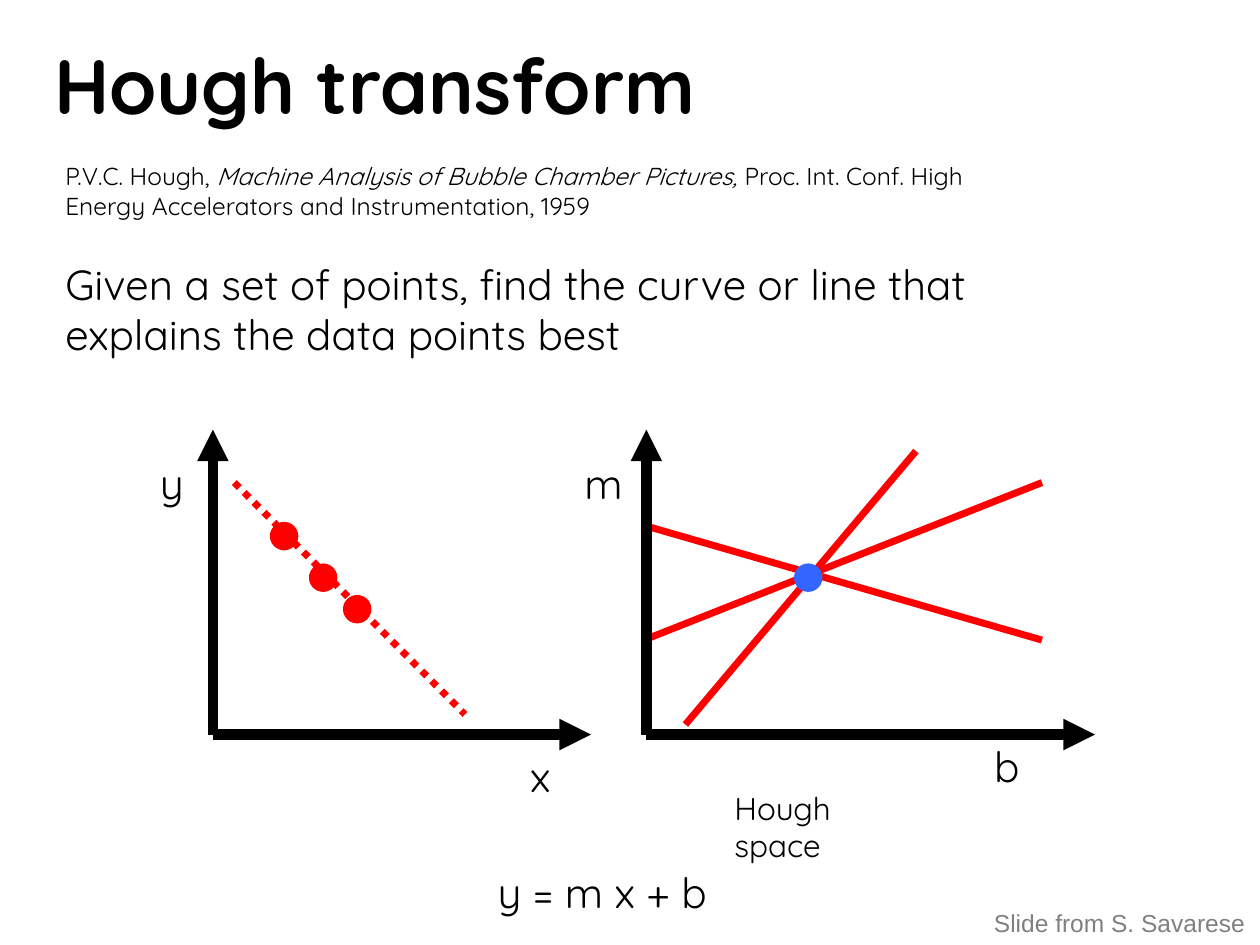
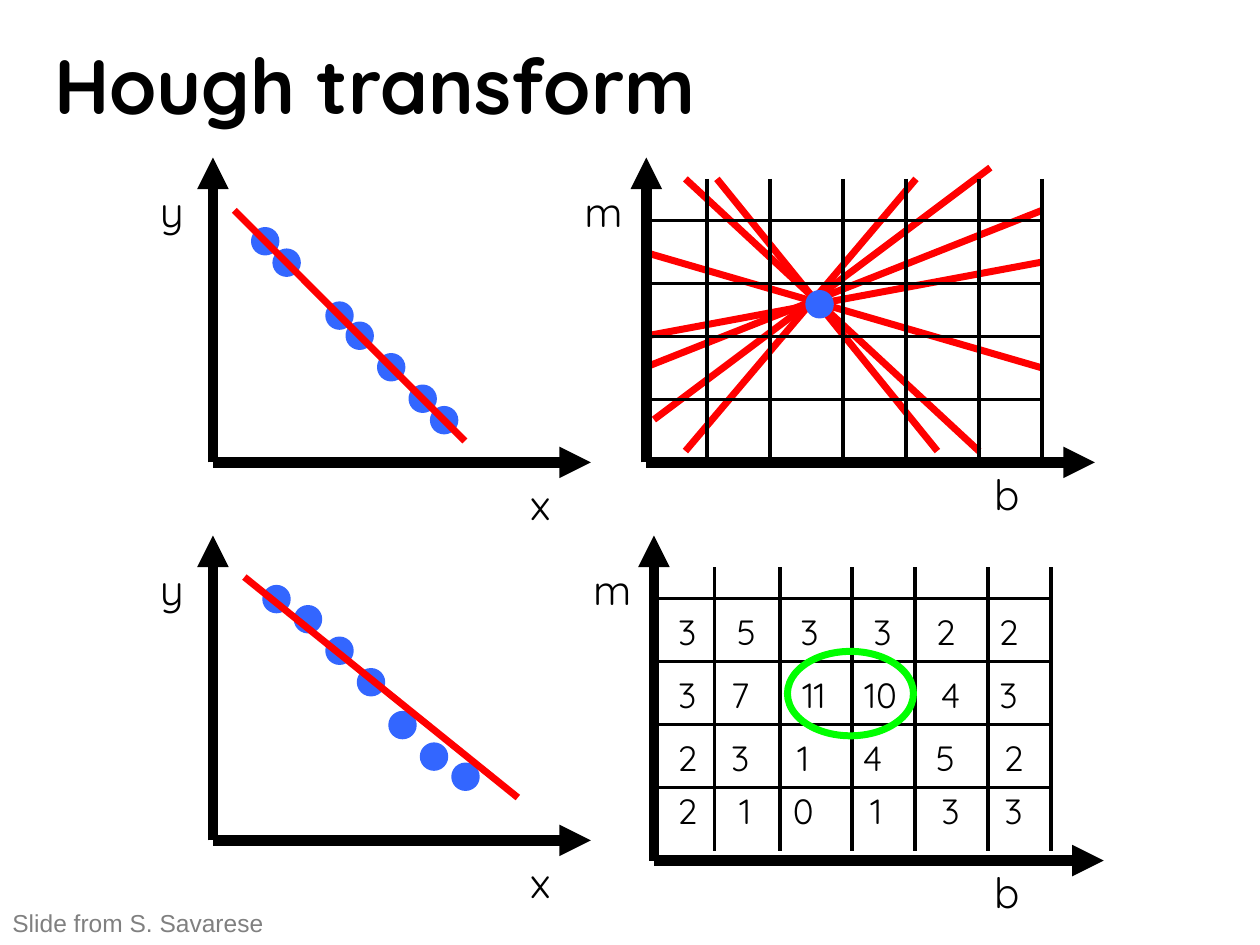
from dataclasses import dataclass
from typing import NamedTuple

from pptx import Presentation
from pptx.dml.color import RGBColor
from pptx.enum.dml import MSO_LINE
from pptx.enum.shapes import MSO_CONNECTOR, MSO_SHAPE
from pptx.enum.text import MSO_ANCHOR, MSO_AUTO_SIZE, PP_ALIGN
from pptx.oxml.ns import qn
from pptx.shapes.autoshape import Shape
from pptx.slide import Slide
from pptx.util import Emu, Pt
from lxml import etree

STRAIGHT = MSO_CONNECTOR.STRAIGHT
OVAL = MSO_SHAPE.OVAL
DOTTED = MSO_LINE.ROUND_DOT
TOP, MIDDLE = MSO_ANCHOR.TOP, MSO_ANCHOR.MIDDLE
LEFT, CENTER = PP_ALIGN.LEFT, PP_ALIGN.CENTER
GROW = MSO_AUTO_SIZE.SHAPE_TO_FIT_TEXT

EMU_PER_PX = 9144
TITLE_ONLY = 5
DOT_SIZE = 17


@dataclass(frozen=True)
class Theme:
    font: str = "Quicksand"
    credit_font: str = "Arial"
    ink: str = "000000"
    red: str = "FF0000"
    blue: str = "3366FF"
    green: str = "00FF00"
    gray: str = "808080"
    title_size: int = 44
    body_size: int = 24
    count_size: int = 20
    caption_size: int = 18
    small_size: int = 14
    axis_width: int = 6
    mark_width: int = 4
    grid_width: int = 2


THEME = Theme()


class Box(NamedTuple):
    left: int
    top: int
    width: int
    height: int


class Segment(NamedTuple):
    x1: int
    y1: int
    x2: int
    y2: int


class Point(NamedTuple):
    left: int
    top: int


class TextRun(NamedTuple):
    text: str
    italic: bool = False


class TextStyle(NamedTuple):
    size: int
    color: str = THEME.ink
    font: str = THEME.font
    bold: bool = False
    align: PP_ALIGN = LEFT
    anchor: MSO_ANCHOR = TOP
    wrap: bool = False


class AxisLabel(NamedTuple):
    text: str
    offset: Point
    width: int


class Axes(NamedTuple):
    origin: Point
    width: int
    height: int
    across: AxisLabel
    upward: AxisLabel


class Grid(NamedTuple):
    columns: tuple[int, ...]
    rows: tuple[int, ...]
    left: int
    right: int
    top: int
    bottom: int


class CountRow(NamedTuple):
    top: int
    counts: tuple[int, ...]
    lefts: tuple[int, ...]


TITLE = TextStyle(THEME.title_size, bold=True, wrap=True)
BODY = TextStyle(THEME.body_size, wrap=True)
CITATION = TextStyle(THEME.small_size, anchor=MIDDLE, wrap=True)
CAPTION = TextStyle(THEME.caption_size, wrap=True)
CREDIT = TextStyle(THEME.small_size, THEME.gray, THEME.credit_font)
LABEL = TextStyle(THEME.body_size, align=CENTER)
COUNT = TextStyle(THEME.count_size, align=CENTER)

X_LABEL = AxisLabel("x", Point(242, 8), 35)
Y_LABEL = AxisLabel("y", Point(-52, 17), 36)
B_LABEL = AxisLabel("b", Point(266, 0), 40)
M_LABEL = AxisLabel("m", Point(-59, 17), 49)


def px(length: int) -> Emu:
    return Emu(length * EMU_PER_PX)


def place(shape: Shape, box: Box) -> None:
    shape.left, shape.top, shape.width, shape.height = map(px, box)


def write(shape: Shape, runs: list[TextRun], style: TextStyle) -> None:
    frame = shape.text_frame
    frame.word_wrap = style.wrap
    frame.auto_size = GROW
    frame.vertical_anchor = style.anchor
    paragraph = frame.paragraphs[0]
    paragraph.alignment = style.align
    for text, italic in runs:
        run = paragraph.add_run()
        run.text = text
        run.font.name = style.font
        run.font.size = Pt(style.size)
        run.font.bold = style.bold
        run.font.italic = italic
        run.font.color.rgb = RGBColor.from_string(style.color)


def add_text(slide: Slide, box: Box, style: TextStyle, *runs: TextRun) -> None:
    write(slide.shapes.add_textbox(*map(px, box)), list(runs), style)


def add_line(slide: Slide, segment: Segment, color: str, width: int,
             arrow: bool = False, dotted: bool = False) -> None:
    connector = slide.shapes.add_connector(STRAIGHT, *map(px, segment))
    connector.line.color.rgb = RGBColor.from_string(color)
    connector.line.width = Pt(width)
    if dotted:
        connector.line.dash_style = DOTTED
    properties = connector._element.spPr
    if arrow:
        outline = properties.find(qn("a:ln"))
        etree.SubElement(outline, qn("a:tailEnd"), type="triangle")
    etree.SubElement(properties, qn("a:effectLst"))


def add_red_lines(slide: Slide, *segments: Segment, dotted: bool = False) -> None:
    for segment in segments:
        add_line(slide, segment, THEME.red, THEME.mark_width, dotted=dotted)


def add_oval(slide: Slide, box: Box, color: str, filled: bool = True) -> None:
    oval = slide.shapes.add_shape(OVAL, *map(px, box))
    oval.shadow.inherit = False
    if filled:
        oval.fill.solid()
        oval.fill.fore_color.rgb = RGBColor.from_string(color)
    else:
        oval.fill.background()
    oval.line.color.rgb = RGBColor.from_string(color)
    oval.line.width = Pt(THEME.mark_width)


def add_dots(slide: Slide, color: str, *points: Point) -> None:
    for point in points:
        add_oval(slide, Box(*point, DOT_SIZE, DOT_SIZE), color)


def add_axes(slide: Slide, axes: Axes) -> None:
    left, bottom = axes.origin
    top = bottom - axes.height
    for segment in (Segment(left, bottom, left, top),
                    Segment(left, bottom, left + axes.width, bottom)):
        add_line(slide, segment, THEME.ink, THEME.axis_width, arrow=True)
    for label, base in ((axes.across, bottom), (axes.upward, top)):
        box = Box(left + label.offset.left, base + label.offset.top, label.width, 50)
        add_text(slide, box, LABEL, TextRun(label.text))


def add_point_axes(slide: Slide, bottom: int) -> None:
    add_axes(slide, Axes(Point(169, bottom), 300, 242, X_LABEL, Y_LABEL))


def add_hough_axes(slide: Slide, bottom: int) -> None:
    add_axes(slide, Axes(Point(513, bottom), 356, 242, B_LABEL, M_LABEL))


def add_grid(slide: Slide, grid: Grid) -> None:
    rows = [Segment(grid.left, y, grid.right, y) for y in grid.rows]
    columns = [Segment(x, grid.top, x, grid.bottom) for x in grid.columns]
    for segment in rows + columns:
        add_line(slide, segment, THEME.ink, THEME.grid_width)


def add_counts(slide: Slide, rows: list[CountRow]) -> None:
    for row in rows:
        for count, left in zip(row.counts, row.lefts):
            text = str(count)
            add_text(slide, Box(left, row.top, 20 + 17 * len(text), 43), COUNT, TextRun(text))


def start_slide(presentation: Presentation, credit_left: int) -> Slide:
    slide = presentation.slides.add_slide(presentation.slide_layouts[TITLE_ONLY])
    title = slide.shapes.title
    place(title, Box(33, 25, 583, 83))
    write(title, [TextRun("Hough transform")], TITLE)
    add_text(slide, Box(credit_left, 716, 221, 34), CREDIT, TextRun("Slide from S. Savarese"))
    return slide


def build_definition(presentation: Presentation) -> None:
    slide = start_slide(presentation, 779)
    add_text(slide, Box(42, 123, 780, 57), CITATION,
             TextRun("P.V.C. Hough, "),
             TextRun("Machine Analysis of Bubble Chamber Pictures,", True),
             TextRun(" Proc. Int. Conf. High Energy Accelerators and Instrumentation, 1959"))
    add_text(slide, Box(42, 200, 842, 91), BODY, TextRun(
        "Given a set of points, find the curve or line that explains the data points best"))
    add_red_lines(slide, Segment(186, 383, 369, 567), dotted=True)
    add_point_axes(slide, 583)
    add_dots(slide, THEME.red, Point(275, 475), Point(217, 417), Point(248, 450))
    add_red_lines(slide, Segment(544, 575, 727, 358), Segment(511, 508, 827, 383),
                  Segment(511, 417, 827, 508))
    add_hough_axes(slide, 583)
    add_dots(slide, THEME.blue, Point(633, 450))
    add_text(slide, Box(573, 621, 165, 40), CAPTION, TextRun("Hough space"))
    add_text(slide, Box(385, 683, 186, 50), LABEL, TextRun("y = m x + b"))


def build_voting(presentation: Presentation) -> None:
    slide = start_slide(presentation, 0)

    add_point_axes(slide, 367)
    add_dots(slide, THEME.blue, *(Point(x, x - 19) for x in (344, 327, 302, 277, 261, 219, 202)))
    add_red_lines(slide, Segment(186, 167, 369, 350))

    add_red_lines(slide, Segment(544, 358, 727, 142), Segment(744, 358, 569, 142),
                  Segment(519, 333, 786, 133), Segment(777, 358, 544, 142),
                  Segment(511, 267, 827, 208), Segment(511, 292, 827, 167),
                  Segment(511, 200, 827, 292))
    add_hough_axes(slide, 367)
    add_grid(slide, Grid((561, 611, 669, 719, 777, 827), (175, 225, 267, 317),
                         511, 827, 142, 367))
    add_dots(slide, THEME.blue, Point(642, 233))

    add_dots(slide, THEME.blue, *(Point(211 + 25 * index, top) for index, top in
                                  enumerate((467, 483, 508, 533, 567, 592, 608))))
    add_point_axes(slide, 667)
    add_red_lines(slide, Segment(194, 458, 411, 633))

    add_axes(slide, Axes(Point(519, 683), 357, 258,
                         B_LABEL._replace(offset=Point(260, 0)),
                         M_LABEL._replace(offset=Point(-58, 17))))
    add_grid(slide, Grid((567, 619, 676, 726, 784, 834), (475, 525, 575, 625),
                         518, 835, 450, 675))
    add_counts(slide, [
        CountRow(480, (3, 5, 3, 3, 2, 2), (527, 574, 624, 682, 732, 782)),
        CountRow(530, (3, 7, 11, 10, 4, 3), (527, 569, 619, 672, 736, 782)),
        CountRow(580, (2, 3, 1, 4, 5, 2), (527, 569, 619, 674, 732, 786)),
        CountRow(622, (2, 1, 0, 1, 3, 3), (527, 573, 619, 677, 736, 786)),
    ])
    add_oval(slide, Box(625, 517, 100, 67), THEME.green, filled=False)


def main() -> None:
    presentation = Presentation()
    presentation.slide_width, presentation.slide_height = px(1000), px(750)
    build_definition(presentation)
    build_voting(presentation)
    presentation.save("out.pptx")


if __name__ == "__main__":
    main()
